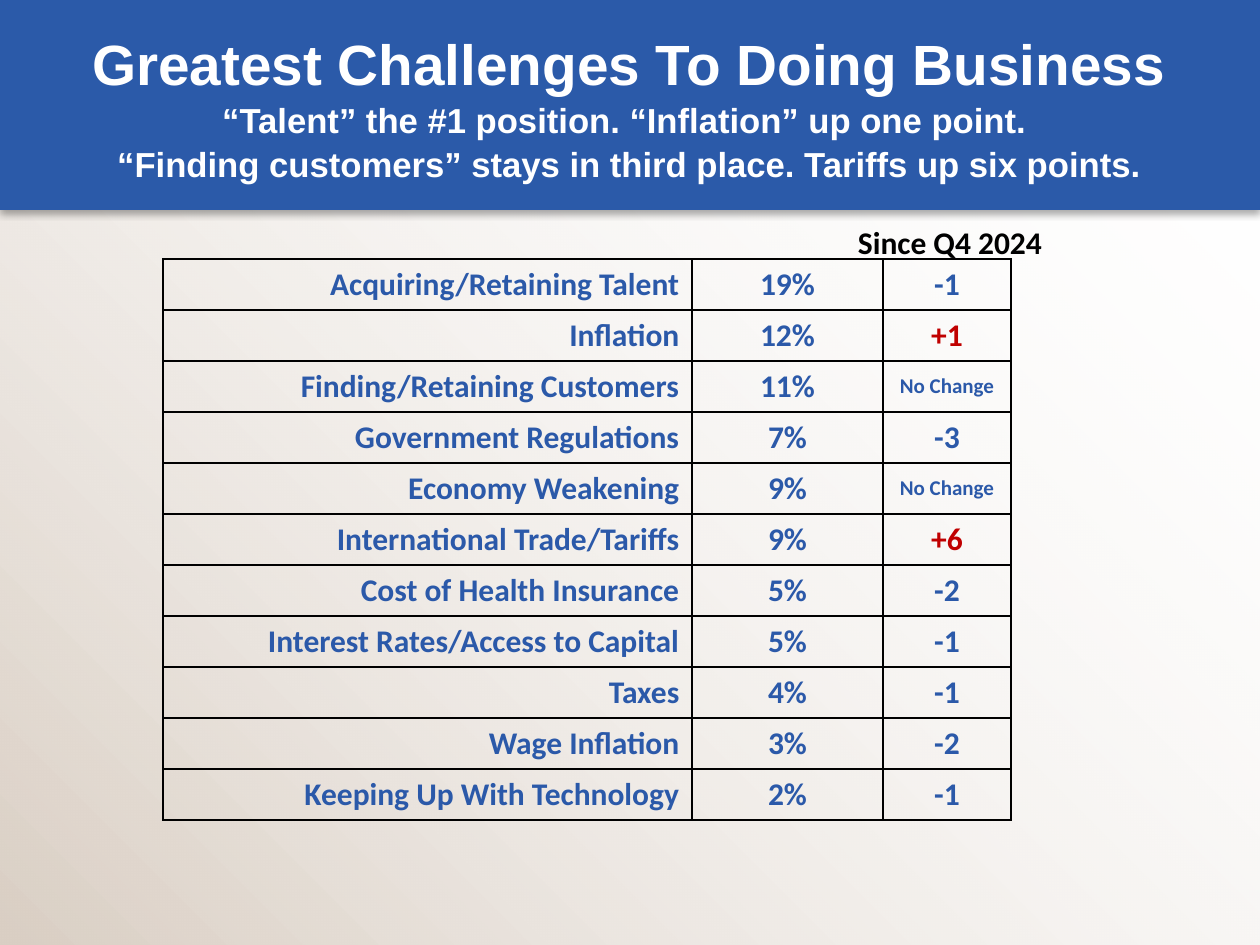
from lxml import etree
from pptx import Presentation
from pptx.dml.color import RGBColor
from pptx.enum.shapes import MSO_SHAPE
from pptx.enum.text import MSO_ANCHOR, PP_ALIGN
from pptx.oxml import parse_xml
from pptx.oxml.ns import nsdecls, qn
from pptx.util import Emu, Pt

RECT = MSO_SHAPE.RECTANGLE
TOP, MIDDLE = MSO_ANCHOR.TOP, MSO_ANCHOR.MIDDLE
LEFT, CENTER, RIGHT = PP_ALIGN.LEFT, PP_ALIGN.CENTER, PP_ALIGN.RIGHT

WHITE = RGBColor(0xFF, 0xFF, 0xFF)
BLACK = RGBColor(0x00, 0x00, 0x00)
SAND = RGBColor(0xDA, 0xCF, 0xC4)
BAND = RGBColor(0x2B, 0x5A, 0xA9)
BLUE = RGBColor(0x2B, 0x59, 0xA9)
RED = RGBColor(0xC0, 0x00, 0x00)

WIDE, HIGH = 1260, 945
ROW = 51
SAME = "No Change"

RANKS = [
    ("Acquiring/Retaining Talent", "19%", "-1"),
    ("Inflation", "12%", "+1"),
    ("Finding/Retaining Customers", "11%", SAME),
    ("Government Regulations", "7%", "-3"),
    ("Economy Weakening", "9%", SAME),
    ("International Trade/Tariffs", "9%", "+6"),
    ("Cost of Health Insurance", "5%", "-2"),
    ("Interest Rates/Access to Capital", "5%", "-1"),
    ("Taxes", "4%", "-1"),
    ("Wage Inflation", "3%", "-2"),
    ("Keeping Up With Technology", "2%", "-1"),
]


def px(count):
    return Emu(round(count * 914400 / 126))


def write(para, text, size=18, font="Calibri", color=BLUE, align=LEFT):
    para.alignment = align
    run = para.add_run()
    run.text = text
    run.font.size = Pt(size)
    run.font.name = font
    run.font.bold = True
    run.font.color.rgb = color


class Deck:
    def __init__(self):
        self.show = Presentation()
        self.show.slide_width, self.show.slide_height = px(WIDE), px(HIGH)
        self.slide = self.show.slides.add_slide(self.show.slide_layouts[6])

    def rect(self, x, y, w, h):
        shape = self.slide.shapes.add_shape(RECT, px(x), px(y), px(w), px(h))
        shape.shadow.inherit = False
        shape.line.fill.background()
        return shape

    def fade(self, x, y, w, h, start, end):
        """Diagonal gradient that ends fully transparent."""
        fill = self.rect(x, y, w, h).fill
        fill.gradient()
        fill.gradient_angle = 45
        for stop, color, place in zip(fill.gradient_stops, (start, end), (0, 1)):
            stop.color.rgb = color
            stop.position = place
        last = list(fill._fill._gradFill.iter(qn("a:srgbClr")))[-1]
        etree.SubElement(last, qn("a:alpha"), val="0")

    def band(self, x, y, w, h, color):
        """Solid bar with a soft shadow below it."""
        shape = self.rect(x, y, w, h)
        shape.fill.solid()
        shape.fill.fore_color.rgb = color
        shape._element.spPr.find(qn("a:effectLst")).append(parse_xml(
            f'<a:outerShdw {nsdecls("a")} blurRad="{Pt(4)}" dist="{Pt(2.2)}" '
            'dir="5400000" rotWithShape="0"><a:srgbClr val="000000">'
            '<a:alpha val="32000"/></a:srgbClr></a:outerShdw>'))

    def text(self, x, y, w, h, anchor=TOP):
        frame = self.slide.shapes.add_textbox(px(x), px(y), px(w), px(h)).text_frame
        frame.word_wrap = True
        frame.vertical_anchor = anchor
        frame.margin_left = frame.margin_right = px(6)
        frame.margin_top = frame.margin_bottom = px(6)
        return frame.paragraphs[0]

    def grid(self, x, y, widths, count):
        frame = self.slide.shapes.add_table(
            count, len(widths), px(x), px(y), px(sum(widths)), px(ROW * count))
        table = frame.table
        table.first_row = table.horz_banding = False
        for col, width in zip(table.columns, widths):
            col.width = px(width)
        for row in table.rows:
            row.height = px(ROW)
            for cell in row.cells:
                self.frame(cell)
        return table

    def frame(self, cell):
        """Clear cell with a thin black line on every side."""
        cell.vertical_anchor = MIDDLE
        cell.fill.background()
        props = cell._tc.get_or_add_tcPr()
        for spot, side in enumerate(("lnL", "lnR", "lnT", "lnB")):
            props.insert(spot, parse_xml(
                f'<a:{side} {nsdecls("a")} w="{Pt(1)}"><a:solidFill>'
                f'<a:srgbClr val="{BLACK}"/></a:solidFill></a:{side}>'))


def main():
    deck = Deck()

    # Backdrop and title band
    deck.fade(0, 0, WIDE, HIGH, SAND, WHITE)
    deck.band(0, 0, WIDE, 210, BAND)

    # Title
    title = deck.text(54, 26, 1150, 158, anchor=MIDDLE)
    title.line_spacing = 1.05
    look = dict(font="Arial", color=WHITE, align=CENTER)
    write(title, "Greatest Challenges To Doing Business", size=32.4, **look)
    for line in ("“Talent” the #1 position. “Inflation” up one point. ",
                 "“Finding customers” stays in third place. Tariffs up six points."):
        title.add_line_break()
        write(title, line, size=19.8, **look)

    # Challenges with their shares, then the change in each
    main_grid = deck.grid(163, 259, (529, 191), len(RANKS))
    side_grid = deck.grid(883, 259, (128,), len(RANKS))
    for row, (name, share, change) in enumerate(RANKS):
        for col, text, align in ((0, name, RIGHT), (1, share, CENTER)):
            write(main_grid.cell(row, col).text_frame.paragraphs[0], text, align=align)
        write(side_grid.cell(row, 0).text_frame.paragraphs[0], change,
              size=12 if change == SAME else 18,
              color=RED if change.startswith("+") else BLUE, align=CENTER)

    # Heading over the change column
    write(deck.text(852, 217, 215, 50), "Since Q4 2024", color=BLACK)

    deck.show.save("out.pptx")


if __name__ == "__main__":
    main()
